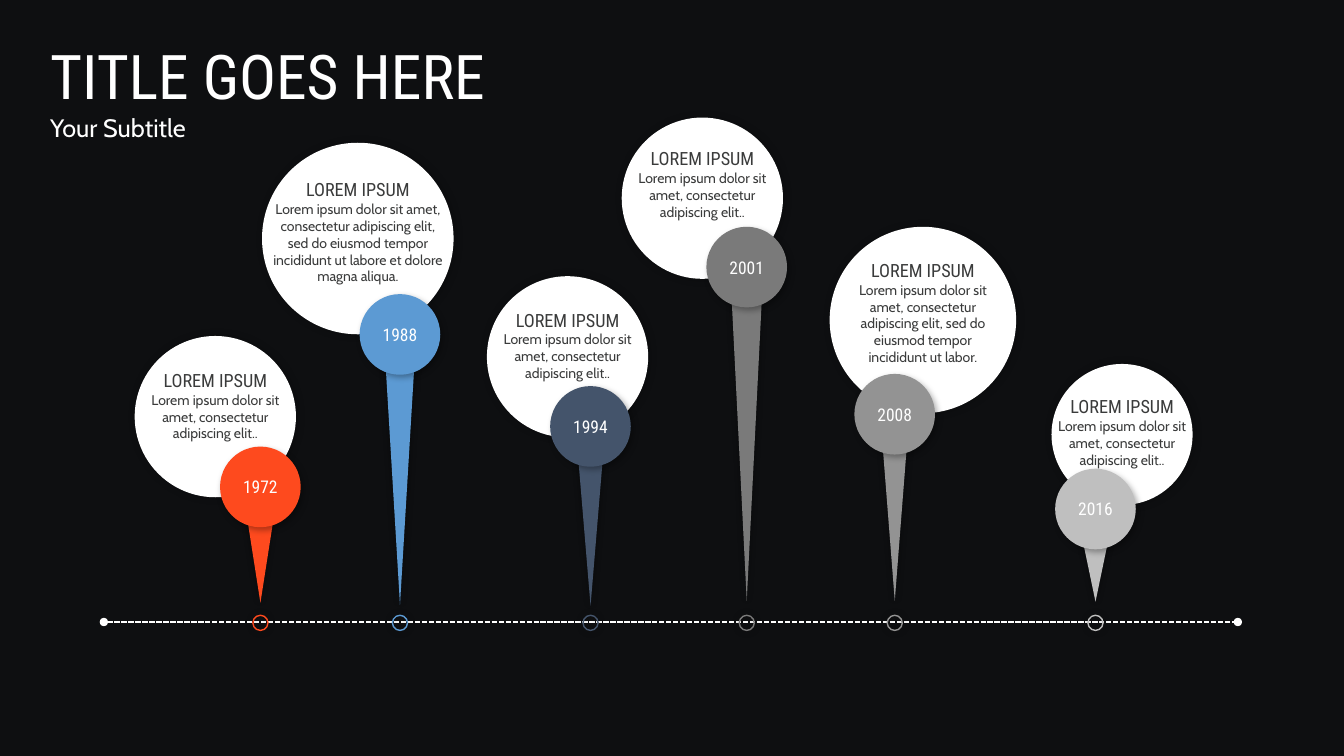
from dataclasses import dataclass
from typing import Any, NamedTuple

from lxml.etree import SubElement
from pptx import Presentation
from pptx.dml.color import RGBColor
from pptx.enum.dml import MSO_LINE
from pptx.enum.shapes import MSO_CONNECTOR, MSO_SHAPE
from pptx.enum.text import MSO_ANCHOR, MSO_AUTO_SIZE, PP_ALIGN
from pptx.oxml.ns import qn
from pptx.shapes.autoshape import Shape
from pptx.text.text import TextFrame
from pptx.util import Pt


class Face(NamedTuple):
    name: str
    size: float
    color: str


class Shade(NamedTuple):
    alpha: int
    blur: float
    dist: float = 0
    angle: int = 0


@dataclass(frozen=True)
class Theme:
    back: str = "0E0F11"
    light: str = "FFFFFF"
    title: Face = Face("Roboto Condensed", 44, "FFFFFF")
    under: Face = Face("Cabin", 18, "FFFFFF")
    head: Face = Face("Roboto Condensed", 13, "3A3B3B")
    body: Face = Face("Cabin", 10, "3A3B3B")
    year: Face = Face("Roboto Condensed", 12.5, "FFFFFF")
    bubble: Shade = Shade(25, 6, 1)
    disc: Shade = Shade(30, 4.5, 2.6, 53)
    soft: Shade = Shade(40, 5)


class Bubble(NamedTuple):
    mid: float
    top: float
    size: float
    text_top: float
    text_wide: float
    text_high: float
    text: str


class Spike(NamedTuple):
    top: float
    wide: float
    high: float


class Milestone(NamedTuple):
    year: str
    color: str
    mid: float
    disc_top: float
    spike: Spike
    bubble: Bubble


THEME = Theme()
DISC, RING = 57.6, 10.8
AXIS_LEFT, AXIS_RIGHT, AXIS_TOP, RING_TOP = 74.2, 884.2, 444.3, 439.5
SHORT = "Lorem ipsum dolor sit amet, consectetur adipiscing elit.."
LONG = "Lorem ipsum dolor sit amet, consectetur adipiscing elit, sed do eiusmod tempor incididunt ut "

STONES = [
    Milestone("1972", "FE4A1E", 186, 319, Spike(373, 18, 57.6),
              Bubble(153.8, 240, 115.2, 261.4, 118.8, 56.9, SHORT)),
    Milestone("1988", "5C9AD3", 285.7, 210.1, Spike(252, 21.6, 180),
              Bubble(255.6, 102, 136.8, 125.3, 134, 81.4, LONG + "labore et dolore magna aliqua.")),
    Milestone("1994", "44546B", 421.8, 275.8, Spike(324.7, 18, 108),
              Bubble(405.4, 197.3, 115.2, 218.2, 118.8, 56.9, SHORT)),
    Milestone("2001", "7A7A7A", 533.4, 162, Spike(213.1, 21.6, 216),
              Bubble(501.7, 84, 115.2, 103, 118.8, 56.9, SHORT)),
    Milestone("2008", "939393", 639.1, 267.1, Spike(313.9, 18, 115.2),
              Bubble(659.2, 162, 133.2, 182.9, 118.8, 81.4, LONG + "labor.")),
    Milestone("2016", "BFBFBF", 782.5, 334.8, Spike(386.6, 18, 43.2),
              Bubble(801.5, 260, 100.8, 280.1, 118.8, 56.9, SHORT)),
]


def rgb(color: str) -> RGBColor:
    return RGBColor.from_string(color)


def set_all(item: Any, values: dict[str, Any]) -> None:
    for key, value in values.items():
        setattr(item, key, value)


def write(frame: TextFrame, lines: list[tuple[str, Face]], align: PP_ALIGN) -> None:
    for index, (text, face) in enumerate(lines):
        para = frame.add_paragraph() if index else frame.paragraphs[0]
        para.alignment = align
        run = para.add_run()
        run.text = text
        set_all(run.font, {"name": face.name, "size": Pt(face.size)})
        run.font.color.rgb = rgb(face.color)


def add_text(shapes: Any, box: tuple[float, ...], lines: list[tuple[str, Face]],
             align: PP_ALIGN, values: dict[str, Any]) -> None:
    frame = shapes.add_textbox(*map(Pt, box)).text_frame
    set_all(frame, {"word_wrap": True, "auto_size": MSO_AUTO_SIZE.SHAPE_TO_FIT_TEXT} | values)
    write(frame, lines, align)


def cast(shape: Shape, shade: Shade) -> None:
    """Give the shape a blurred black outer shadow."""
    shape.shadow.inherit = False
    effects = shape.element.spPr.find(qn("a:effectLst"))
    outer = SubElement(effects, qn("a:outerShdw"), blurRad=str(Pt(shade.blur)),
                       dist=str(Pt(shade.dist)), dir=str(shade.angle * 60000),
                       algn="ctr", rotWithShape="0")
    black = SubElement(outer, qn("a:srgbClr"), val="000000")
    SubElement(black, qn("a:alpha"), val=str(shade.alpha * 1000))


def add_form(shapes: Any, kind: MSO_SHAPE, mid: float, top: float, wide: float,
             high: float, color: str, shade: Shade, hollow: bool = False) -> Shape:
    """Draw a shape centred on mid, either filled or outlined in the color."""
    shape = shapes.add_shape(kind, Pt(mid - wide / 2), Pt(top), Pt(wide), Pt(high))
    if hollow:
        shape.fill.background()
        shape.line.color.rgb = rgb(color)
        shape.line.width = Pt(1)
    else:
        shape.fill.solid()
        shape.fill.fore_color.rgb = rgb(color)
        shape.line.fill.background()
    cast(shape, shade)
    return shape


def add_bubble(shapes: Any, bubble: Bubble) -> None:
    group = shapes.add_group_shape().shapes
    add_form(group, MSO_SHAPE.OVAL, bubble.mid, bubble.top, bubble.size, bubble.size,
             THEME.light, THEME.bubble)
    box = (bubble.mid - bubble.text_wide / 2, bubble.text_top, bubble.text_wide, bubble.text_high)
    add_text(group, box, [("LOREM IPSUM", THEME.head), (bubble.text, THEME.body)], PP_ALIGN.CENTER,
             {"margin_left": Pt(5), "margin_right": Pt(5),
              "margin_top": Pt(2.4), "margin_bottom": Pt(2.4)})


def add_pin(shapes: Any, stone: Milestone) -> None:
    spike = add_form(shapes, MSO_SHAPE.ISOSCELES_TRIANGLE, stone.mid, *stone.spike,
                     stone.color, THEME.soft)
    spike.rotation = 180
    disc = add_form(shapes, MSO_SHAPE.OVAL, stone.mid, stone.disc_top, DISC, DISC,
                    stone.color, THEME.disc)
    disc.text_frame.vertical_anchor = MSO_ANCHOR.MIDDLE
    write(disc.text_frame, [(stone.year, THEME.year)], PP_ALIGN.CENTER)


def add_axis(shapes: Any) -> None:
    axis = shapes.add_connector(MSO_CONNECTOR.STRAIGHT, Pt(AXIS_LEFT), Pt(AXIS_TOP),
                                Pt(AXIS_RIGHT), Pt(AXIS_TOP))
    axis.line.color.rgb = rgb(THEME.light)
    set_all(axis.line, {"width": Pt(1.25), "dash_style": MSO_LINE.SQUARE_DOT})
    for end in ("a:headEnd", "a:tailEnd"):
        SubElement(axis.get_or_add_ln(), qn(end), type="oval")
    SubElement(axis.element.spPr, qn("a:effectLst"))


def main() -> None:
    deck = Presentation()
    set_all(deck, {"slide_width": Pt(960), "slide_height": Pt(540)})
    slide = deck.slides.add_slide(deck.slide_layouts[6])
    slide.background.fill.solid()
    slide.background.fill.fore_color.rgb = rgb(THEME.back)
    shapes = slide.shapes
    for stone in reversed(STONES):
        add_bubble(shapes, stone.bubble)
    add_text(shapes, (28.8, 23.8, 468, 82),
             [("TITLE GOES HERE", THEME.title), ("Your Subtitle", THEME.under)], PP_ALIGN.LEFT, {})
    for stone in STONES:
        add_pin(shapes, stone)
    add_axis(shapes)
    for stone in STONES:
        add_form(shapes, MSO_SHAPE.OVAL, stone.mid, RING_TOP, RING, RING,
                 stone.color, THEME.soft, hollow=True)
    deck.save("out.pptx")


if __name__ == "__main__":
    main()
